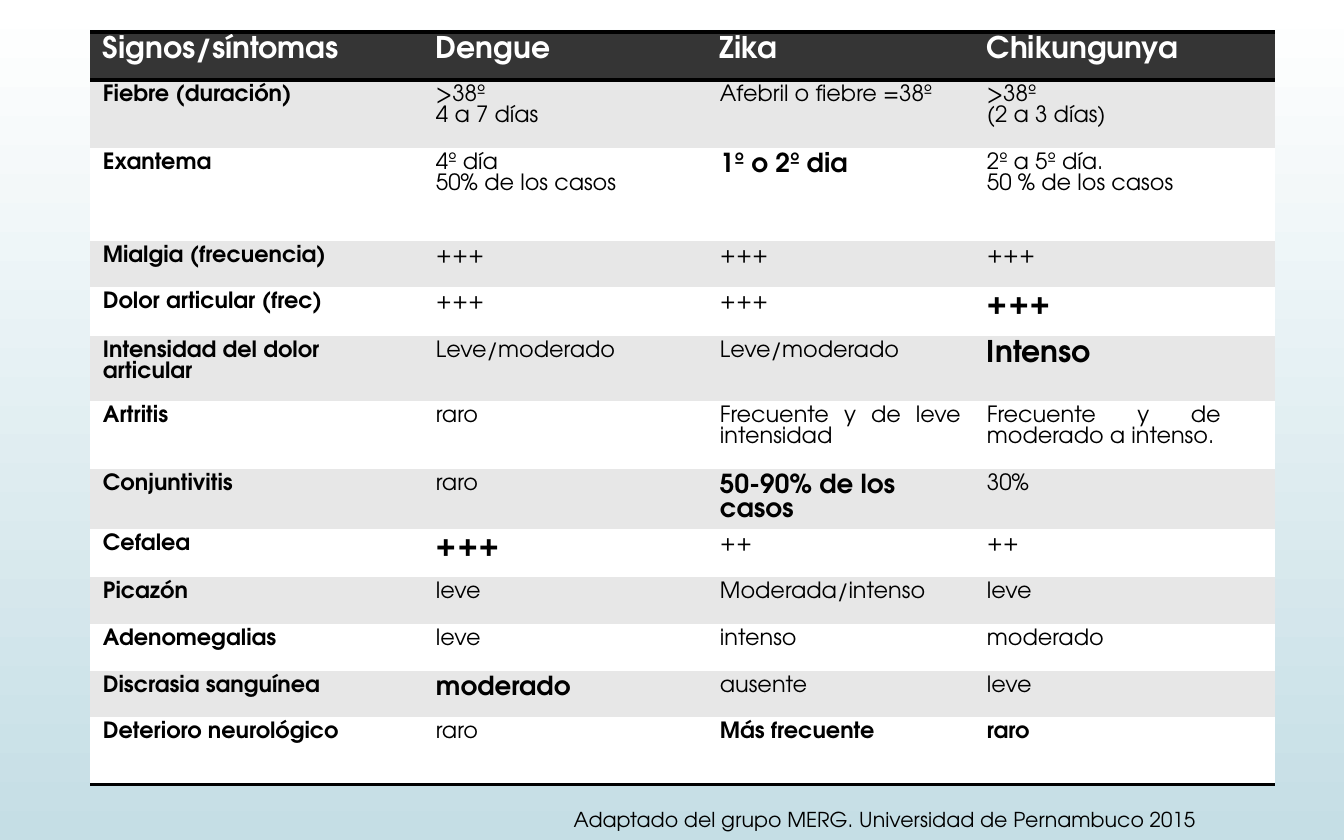
import pptx
import pptx.util
import pptx.dml.color
import pptx.enum.text
import pptx.oxml

PX = 914400 / 134.4
FONT = "TeX Gyre Adventor"
COLORS = {
    "ink": "000000", "paper": "FFFFFF", "header": "353535",
    "band": "E7E7E7", "sky": "C5DEE5",
}
NO_GRID_STYLE = "{2D5ABB26-0587-4C30-8999-92F81FD0307C}"
DISEASES_HEADER = ["Signos/síntomas", "Dengue", "Zika", "Chikungunya"]
SYMPTOMS = [
    ["Fiebre (duración)", ">38º\n4 a 7 días", "Afebril o fiebre =38º", ">38º\n(2 a 3 días)"],
    ["Exantema", "4º día\n50% de los casos", "1º o 2º dia", "2º a 5º día.\n50 % de los casos"],
    ["Mialgia (frecuencia)", "+++", "+++", "+++"],
    ["Dolor articular (frec)", "+++", "+++", "+++"],
    ["Intensidad del dolor articular", "Leve/moderado", "Leve/moderado", "Intenso"],
    ["Artritis", "raro", "Frecuente y de leve intensidad", "Frecuente y de moderado a intenso."],
    ["Conjuntivitis", "raro", "50-90% de los casos", "30%"],
    ["Cefalea", "+++", "++", "++"],
    ["Picazón", "leve", "Moderada/intenso", "leve"],
    ["Adenomegalias", "leve", "intenso", "moderado"],
    ["Discrasia sanguínea", "moderado", "ausente", "leve"],
    ["Deterioro neurológico", "raro", "Más frecuente", "raro"],
]
EMPHASIS = {
    (2, 2): 14, (4, 3): 16, (5, 3): 16, (7, 2): 14,
    (8, 1): 16, (11, 1): 14, (12, 2): 12, (12, 3): 12,
}
ARTHRITIS_ROW = 6
COLUMN_WIDTHS = [333, 284, 267, 301]
ROW_HEIGHTS = [48, 68, 93, 46, 49, 65, 68, 60, 48, 47, 47, 46, 68]


def px(length):
    return pptx.util.Emu(round(length * PX))


def rgb(name):
    return pptx.dml.color.RGBColor.from_string(COLORS[name])


def write(frame, text, size, bold, color, align):
    for index, line in enumerate(text.split("\n")):
        paragraph = frame.add_paragraph() if index else frame.paragraphs[0]
        paragraph.alignment = align
        run = paragraph.add_run()
        run.text = line
        run.font.name = FONT
        run.font.size = pptx.util.Pt(size)
        run.font.bold = bold
        run.font.color.rgb = rgb(color)


def rule_cell(cell, sides):
    properties = cell._tc.get_or_add_tcPr()
    for position, side in enumerate(sides):
        properties.insert(position, pptx.oxml.parse_xml(
            '<a:%s xmlns:a="http://schemas.openxmlformats.org/drawingml/2006/main" w="%d">'
            '<a:solidFill><a:srgbClr val="%s"/></a:solidFill></a:%s>'
            % (side, pptx.util.Pt(2), COLORS["ink"], side)))


def paint_background(slide):
    fill = slide.background.fill
    fill.gradient()
    fill.gradient_angle = 270
    for stop, name in zip(fill.gradient_stops, ["paper", "sky"]):
        stop.color.rgb = rgb(name)


def add_comparison(slide, left, top):
    rows = [DISEASES_HEADER] + SYMPTOMS
    frame = slide.shapes.add_table(
        len(rows), len(DISEASES_HEADER), px(left), px(top),
        px(sum(COLUMN_WIDTHS)), px(sum(ROW_HEIGHTS)))
    comparison = frame.table
    comparison.horz_banding = False
    comparison._tbl.tblPr[0].text = NO_GRID_STYLE
    for column, width in zip(comparison.columns, COLUMN_WIDTHS):
        column.width = px(width)
    for row, height in zip(comparison.rows, ROW_HEIGHTS):
        row.height = px(height)

    for r, symptom in enumerate(rows):
        for c, finding in enumerate(symptom):
            cell = comparison.cell(r, c)
            cell.margin_left = cell.margin_right = px(13)
            cell.margin_top = cell.margin_bottom = px(5)
            cell.fill.solid()
            cell.fill.fore_color.rgb = rgb(
                "header" if r == 0 else "band" if r % 2 else "paper")
            size = 16 if r == 0 else EMPHASIS.get((r, c), 12)
            bold = r == 0 or c == 0 or (r, c) in EMPHASIS
            align = (pptx.enum.text.PP_ALIGN.JUSTIFY if r == ARTHRITIS_ROW
                     else pptx.enum.text.PP_ALIGN.LEFT)
            write(cell.text_frame, finding, size, bold,
                  "ink" if r else "paper", align)
            if r == 0:
                rule_cell(cell, ["lnT", "lnB"])
            elif r == len(rows) - 1:
                rule_cell(cell, ["lnB"])
    comparison.cell(ARTHRITIS_ROW, 3).margin_right = px(54)


def add_credit(slide, left, top, width, height):
    credit = slide.shapes.add_textbox(px(left), px(top), px(width), px(height))
    credit.text_frame.word_wrap = True
    write(credit.text_frame, "Adaptado del grupo MERG. Universidad de Pernambuco 2015",
          11, False, "ink", pptx.enum.text.PP_ALIGN.CENTER)


def main():
    deck = pptx.Presentation()
    deck.slide_width, deck.slide_height = px(1344), px(840)
    slide = deck.slides.add_slide(deck.slide_layouts[6])
    paint_background(slide)
    add_comparison(slide, 90, 32)
    add_credit(slide, 429, 800, 912, 39)
    deck.save("out.pptx")


if __name__ == "__main__":
    main()
